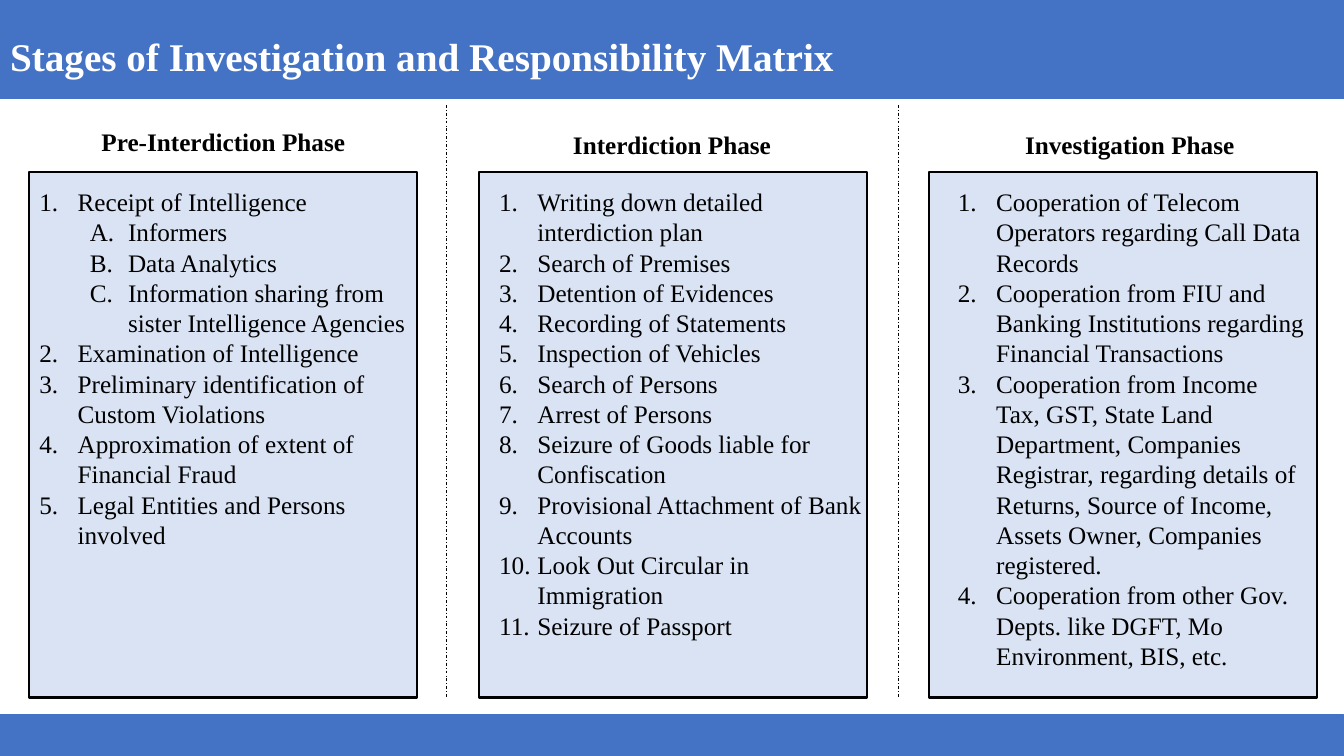
from lxml import etree
from pptx import Presentation
from pptx.dml.color import RGBColor
from pptx.enum.dml import MSO_LINE
from pptx.enum.shapes import MSO_CONNECTOR, MSO_SHAPE
from pptx.enum.text import MSO_ANCHOR, MSO_AUTO_SIZE, PP_ALIGN
from pptx.oxml.ns import qn
from pptx.util import Inches, Pt

RECTANGLE = MSO_SHAPE.RECTANGLE
STRAIGHT = MSO_CONNECTOR.STRAIGHT
DASH_DOT = MSO_LINE.DASH_DOT
LEFT, CENTER = PP_ALIGN.LEFT, PP_ALIGN.CENTER

PAGE_WIDTH, PAGE_HEIGHT = 13.33, 7.5
MARGIN, COLUMN_WIDTH, COLUMN_PITCH = 0.29, 3.85, 4.46
PANEL_TOP, PANEL_HEIGHT = 1.71, 5.21
LIST_TOP = 1.8
INDENT, LEVEL_STEP = 0.38, 0.5
NUMBERING = ("arabicPeriod", "alphaUcPeriod")
BLUE, PALE_BLUE, BLACK, WHITE = "4472C4", "DAE3F3", "000000", "FFFFFF"

# Each phase: heading, heading place, list place, items as text or (text, level)
PHASES = [
    ("Pre-Interdiction Phase", (0.29, 1.2), (0.29, 3.85, 4.04), [
        "Receipt of Intelligence",
        ("Informers", 1),
        ("Data Analytics", 1),
        ("Information sharing from sister Intelligence Agencies", 1),
        "Examination of Intelligence",
        "Preliminary identification of Custom Violations",
        "Approximation of extent of Financial Fraud",
        "Legal Entities and Persons involved",
    ]),
    ("Interdiction Phase", (4.74, 1.23), (4.85, 3.85, 5.55), [
        "Writing down detailed interdiction plan",
        "Search of Premises",
        "Detention of Evidences",
        "Recording of Statements",
        "Inspection of Vehicles",
        "Search of Persons",
        "Arrest of Persons",
        "Seizure of Goods liable for Confiscation",
        "Provisional Attachment of Bank Accounts",
        "Look Out Circular in Immigration",
        "Seizure of Passport",
    ]),
    ("Investigation Phase", (9.28, 1.23), (9.4, 3.66, 5.86), [
        "Cooperation of Telecom Operators regarding Call Data Records",
        "Cooperation from FIU and Banking Institutions regarding Financial Transactions",
        "Cooperation from Income Tax, GST, State Land Department, Companies Registrar, "
        "regarding details of Returns, Source of Income, Assets Owner, Companies registered.",
        "Cooperation from other Gov. Depts. like DGFT, Mo Environment, BIS, etc.",
    ]),
]


def color(hex_value):
    return RGBColor.from_string(hex_value)


def set_all(target, **values):
    for name, value in values.items():
        setattr(target, name, value)


def place(box, left, top, width, height):
    set_all(box, left=Inches(left), top=Inches(top),
            width=Inches(width), height=Inches(height))


def bring_to_front(box):
    box.element.getparent().append(box.element)


def add_panel(page, area, fill, line, line_width):
    panel = page.shapes.add_shape(RECTANGLE, *map(Inches, area))
    panel.shadow.inherit = False
    panel.fill.solid()
    panel.fill.fore_color.rgb = color(fill)
    panel.line.color.rgb = color(line)
    panel.line.width = Pt(line_width)


def prepare_frame(box):
    frame = box.text_frame
    set_all(frame, word_wrap=True, auto_size=MSO_AUTO_SIZE.SHAPE_TO_FIT_TEXT,
            vertical_anchor=MSO_ANCHOR.TOP)
    return frame


def write(para, text, size, ink, bold, align):
    set_all(para, alignment=align, space_before=Pt(0))
    span = para.add_run()
    span.text = text
    set_all(span.font, name="Times New Roman", size=Pt(size), bold=bold)
    span.font.color.rgb = color(ink)


def number(para, level):
    """Give the paragraph a hanging indent and automatic numbering."""
    para.level = level
    properties = para._p.get_or_add_pPr()
    properties.set("marL", str(Inches(INDENT + level * LEVEL_STEP)))
    properties.set("indent", str(-Inches(INDENT)))
    etree.SubElement(properties, qn("a:buAutoNum"), type=NUMBERING[level])


def fill_list(box, items):
    frame = prepare_frame(box)
    for index, item in enumerate(items):
        text, level = (item, 0) if isinstance(item, str) else item
        para = frame.add_paragraph() if index else frame.paragraphs[0]
        write(para, text, 18, BLACK, False, LEFT)
        number(para, level)


def add_heading(page, text, left, top):
    box = page.shapes.add_textbox(*map(Inches, (left, top, COLUMN_WIDTH, 0.4)))
    write(prepare_frame(box).paragraphs[0], text, 18, BLACK, True, CENTER)


def add_divider(page, x):
    bottom = PANEL_TOP + PANEL_HEIGHT
    divider = page.shapes.add_connector(STRAIGHT, *map(Inches, (x, 1.04, x, bottom)))
    divider.line.color.rgb = color(BLACK)
    set_all(divider.line, width=Pt(0.5), dash_style=DASH_DOT)
    etree.SubElement(divider.element.spPr, qn("a:effectLst"))


def main():
    deck = Presentation()
    set_all(deck, slide_width=Inches(PAGE_WIDTH), slide_height=Inches(PAGE_HEIGHT))
    page = deck.slides.add_slide(deck.slide_layouts.get_by_name("Comparison"))
    title, *bodies = page.placeholders
    spare = bodies.pop()
    spare.element.getparent().remove(spare.element)

    add_panel(page, (0, 0, PAGE_WIDTH, 0.96), BLUE, BLUE, 3)
    add_panel(page, (0, 7.1, PAGE_WIDTH, 0.4), BLUE, BLUE, 2.25)
    place(title, 0, 0.27, 12.01, 0.57)
    write(prepare_frame(title).paragraphs[0],
          "Stages of Investigation and Responsibility Matrix", 28, WHITE, True, LEFT)
    bring_to_front(title)

    for column, (phase, body) in enumerate(zip(PHASES, bodies)):
        heading, heading_place, (left, width, height), items = phase
        panel_left = MARGIN + column * COLUMN_PITCH
        add_panel(page, (panel_left, PANEL_TOP, COLUMN_WIDTH, PANEL_HEIGHT),
                  PALE_BLUE, BLACK, 1.5)
        add_heading(page, heading, *heading_place)
        place(body, left, LIST_TOP, width, height)
        fill_list(body, items)
        bring_to_front(body)

    for x in (4.43, 8.91):
        add_divider(page, x)
    deck.save("out.pptx")


if __name__ == "__main__":
    main()
